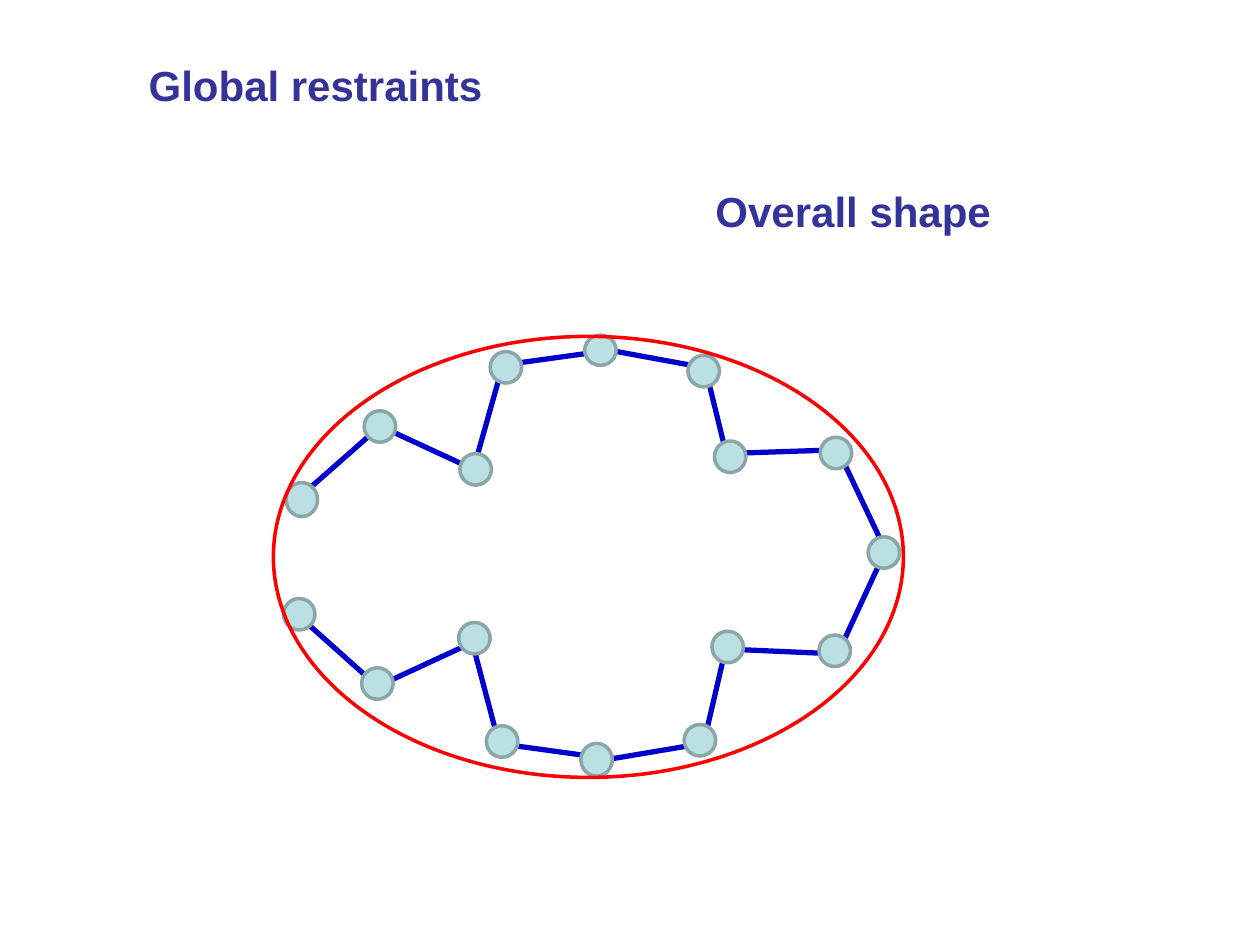
from dataclasses import dataclass
from typing import Optional

from lxml.etree import SubElement
from pptx import Presentation
from pptx.dml.color import RGBColor
from pptx.enum.shapes import MSO_CONNECTOR, MSO_SHAPE
from pptx.enum.text import MSO_ANCHOR, MSO_AUTO_SIZE, PP_ALIGN
from pptx.oxml.ns import qn
from pptx.util import Inches, Pt

COLUMNS, ROWS = 100, 75
CELL = Inches(0.1)
BEAD_SIZE = 2.5
HEADING_COLOR, LINK_COLOR = "333399", "0000CC"
BEAD_FILL, BEAD_EDGE, ENVELOPE_COLOR = "BBE0E3", "8AA6A8", "FF0000"


@dataclass(frozen=True)
class Area:
    """A rectangle in grid columns and rows."""
    left: float
    top: float
    width: float
    height: float

    def lengths(self) -> list[int]:
        """Return the rectangle in slide units."""
        return [grid(value) for value in (self.left, self.top, self.width, self.height)]


@dataclass(frozen=True)
class Bead:
    """A chain bead by its corner, with the link to the next bead."""
    left: float
    top: float
    link: Optional[tuple[float, float, float, float]] = None
    height: float = BEAD_SIZE


LOWER_CHAIN = [
    Bead(22.5, 47.5, (23.4, 48.6, 30, 54.5)),
    Bead(28.7, 53, (29.7, 54.6, 37.7, 50.9)),
    Bead(36.4, 49.4, (37.3, 50.3, 39.6, 59)),
    Bead(38.6, 57.6, (39.5, 59, 48.2, 60.2)),
    Bead(46.1, 59, (46.9, 60.5, 55.8, 59), 2.6),
    Bead(54.3, 57.5, (55.8, 59.2, 57.8, 50.6)),
    Bead(56.5, 50.1, (57.4, 51.5, 66.4, 51.9)),
    Bead(65, 50.4, (66.3, 52.3, 70, 44.3)),
]
UPPER_CHAIN = [
    Bead(22.7, 38.3, (23.5, 39.7, 30.2, 33.8), 2.7),
    Bead(28.9, 32.6, (29.7, 33.6, 37.7, 37.3)),
    Bead(36.5, 36, (37.5, 37.5, 39.9, 29)),
    Bead(38.9, 27.9, (39.7, 29, 48.4, 27.8)),
    Bead(46.4, 26.6, (47.3, 27.6, 56, 29.2), 2.4),
    Bead(54.6, 28.2, (55.9, 28.9, 58, 37.5)),
    Bead(56.7, 35, (57.5, 36, 66.5, 35.7)),
    Bead(65.1, 34.7, (66.4, 35.5, 70.2, 43.5)),
    Bead(68.9, 42.6),
]


def grid(cells: float) -> int:
    """Convert grid cells to slide units."""
    return round(cells * CELL)


def color(value: str) -> RGBColor:
    """Convert a hex string to a colour."""
    return RGBColor.from_string(value)


def write_heading(box, text: str, area: Area) -> None:
    """Place a bold heading in a box."""
    box.left, box.top, box.width, box.height = area.lengths()
    frame = box.text_frame
    frame.text = text
    frame.word_wrap = True
    frame.auto_size = MSO_AUTO_SIZE.SHAPE_TO_FIT_TEXT
    frame.vertical_anchor = MSO_ANCHOR.TOP
    paragraph = frame.paragraphs[0]
    paragraph.alignment = PP_ALIGN.LEFT
    font = paragraph.runs[0].font
    font.name, font.size, font.bold = "Arial", Pt(24), True
    font.color.rgb = color(HEADING_COLOR)


def draw_ellipse(page, area: Area, edge: str, fill: Optional[str] = None) -> None:
    """Draw an outlined ellipse, filled if a fill is given."""
    ellipse = page.shapes.add_shape(MSO_SHAPE.OVAL, *area.lengths())
    ellipse.shadow.inherit = False
    ellipse.line.color.rgb = color(edge)
    ellipse.line.width = Pt(2)
    if fill:
        ellipse.fill.solid()
        ellipse.fill.fore_color.rgb = color(fill)
    else:
        ellipse.fill.background()


def draw_link(page, ends: tuple[float, float, float, float]) -> None:
    """Draw a straight link between two beads."""
    link = page.shapes.add_connector(MSO_CONNECTOR.STRAIGHT, *map(grid, ends))
    link.line.color.rgb = color(LINK_COLOR)
    link.line.width = Pt(3)
    SubElement(link._element.spPr, qn("a:effectLst"))


def draw_chain(page, beads: list[Bead]) -> None:
    """Draw each bead over the link that leaves it."""
    for bead in beads:
        if bead.link:
            draw_link(page, bead.link)
        area = Area(bead.left, bead.top, BEAD_SIZE, bead.height)
        draw_ellipse(page, area, BEAD_EDGE, BEAD_FILL)


def main() -> None:
    """Build the slide and save the deck."""
    deck = Presentation()
    deck.slide_width, deck.slide_height = grid(COLUMNS), grid(ROWS)
    page = deck.slides.add_slide(deck.slide_layouts[5])
    write_heading(page.shapes.title, "Global restraints", Area(10.8, 4.2, 51.7, 5))
    draw_chain(page, LOWER_CHAIN)
    draw_chain(page, UPPER_CHAIN)
    shape_area = Area(55.8, 14.2, 27.5, 5)
    write_heading(page.shapes.add_textbox(*shape_area.lengths()), "Overall shape", shape_area)
    draw_ellipse(page, Area(21.7, 26.7, 50, 35), ENVELOPE_COLOR)
    deck.save("out.pptx")


if __name__ == "__main__":
    main()
